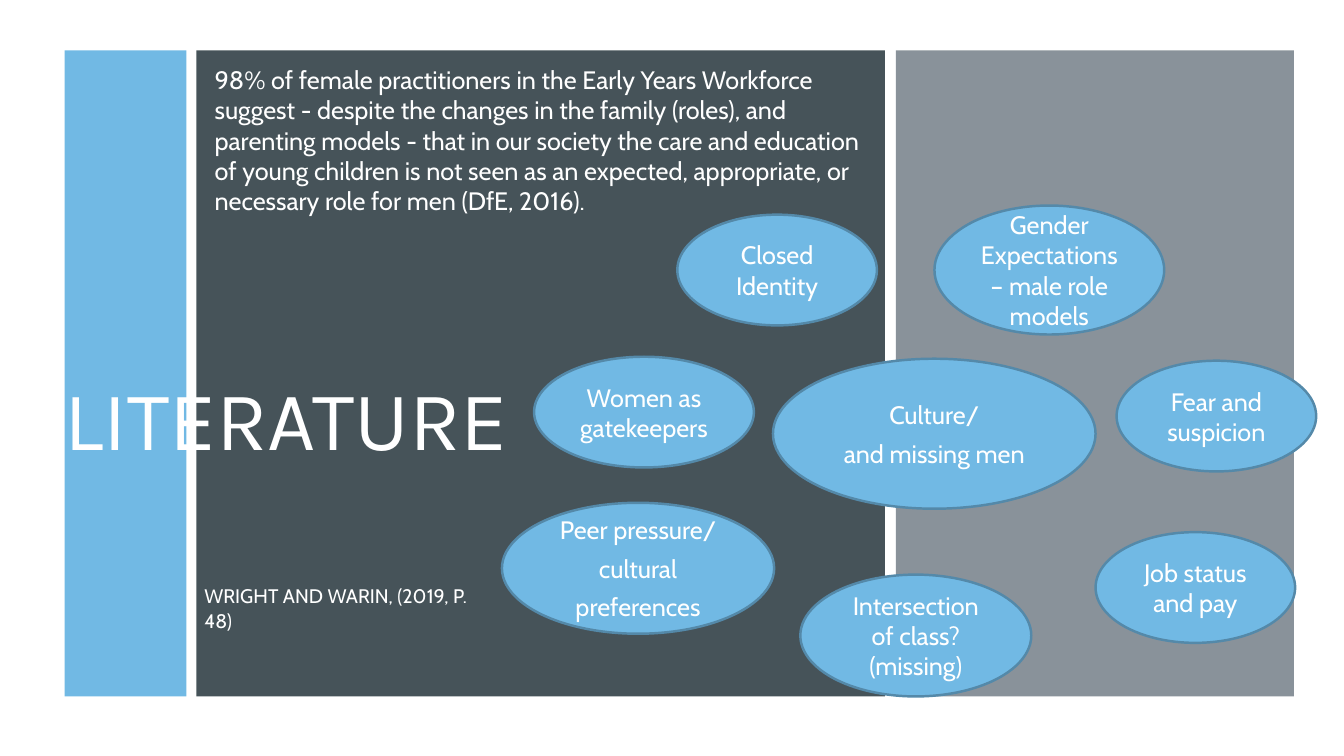
from lxml import etree
from pptx import Presentation
from pptx import util as u
from pptx.dml.color import RGBColor
from pptx.enum import shapes, text
from pptx.oxml.ns import qn

WHITE = RGBColor(0xFF, 0xFF, 0xFF)
BLUE = RGBColor(0x71, 0xB9, 0xE4)
BLUE_EDGE = RGBColor(0x54, 0x89, 0xA9)
SLATE = RGBColor(0x46, 0x53, 0x59)
GREY = RGBColor(0x6C, 0x77, 0x81)

WIDTH, HEIGHT = 33.87, 19.05
PANEL_TOP, PANEL_HEIGHT = 1.27, 16.28

QUOTE = (
    "98% of female practitioners in the Early Years Workforce suggest - "
    "despite the changes in the family (roles), and parenting models - "
    "that in our society the care and education of young children is not "
    "seen as an expected, appropriate, or necessary role for men (DfE, 2016)."
)

# left, top, width, height in cm, wording
THEMES = [
    (19.48, 9.04, 8.13, 3.78, "Culture/\nand missing men"),
    (23.55, 5.18, 5.79, 3.25, "Gender Expectations – male role models"),
    (13.46, 8.99, 5.54, 2.79, "Women as gatekeepers"),
    (20.17, 14.48, 5.82, 3.07, "Intersection of class? (missing)"),
    (28.14, 9.09, 5.03, 2.79, "Fear and suspicion"),
    (27.61, 13.41, 5.03, 2.79, "Job status and pay"),
    (12.65, 12.67, 6.86, 3.3, "Peer pressure/\ncultural\npreferences"),
    (17.07, 5.41, 5.03, 2.79, "Closed Identity"),
]


class Deck:
    """Holds the text style and the slide being built; lengths are in cm."""

    font, size = "Cabin", 18

    def __init__(self):
        self.prs = Presentation()
        self.prs.slide_width = u.Cm(WIDTH)
        self.prs.slide_height = u.Cm(HEIGHT)
        self.s = self.prs.slides.add_slide(self.prs.slide_layouts[5])

    def set_text(self, sp, wording, font=None, size=None,
                 align=text.PP_ALIGN.LEFT, anchor=text.MSO_ANCHOR.MIDDLE,
                 after=0, spacing=1.0):
        tf = sp.text_frame
        tf.text = wording
        tf.word_wrap = True
        tf.auto_size = text.MSO_AUTO_SIZE.NONE
        tf.vertical_anchor = anchor
        for p in tf.paragraphs:
            p.alignment = align
            p.space_before, p.space_after = u.Pt(0), u.Pt(after)
            p.line_spacing = spacing
            for r in p.runs:
                r.font.name = font or self.font
                r.font.size = u.Pt(size or self.size)
                r.font.color.rgb = WHITE

    def shape(self, kind, box, fill):
        sp = self.s.shapes.add_shape(kind, *map(u.Cm, box))
        sp.shadow.inherit = False
        sp.fill.solid()
        sp.fill.fore_color.rgb = fill
        sp.line.fill.background()
        return sp

    def panel(self, box, fill, opacity=100):
        sp = self.shape(shapes.MSO_SHAPE.RECTANGLE, box, fill)
        if opacity < 100:
            color = sp._element.spPr.find(".//" + qn("a:srgbClr"))
            etree.SubElement(color, qn("a:alpha"), val=str(opacity * 1000))

    def bubble(self, box, wording):
        sp = self.shape(shapes.MSO_SHAPE.OVAL, box, BLUE)
        sp.line.color.rgb = BLUE_EDGE
        sp.line.width = u.Pt(1.75)
        self.set_text(sp, wording, align=text.PP_ALIGN.CENTER, after=6)

    def title(self, box, wording):
        """Place the title placeholder in front of the panels drawn so far."""
        sp = self.s.shapes.title
        sp.left, sp.top, sp.width, sp.height = map(u.Cm, box)
        self.set_text(sp, wording, font="Karla", size=60)
        self.s.shapes._spTree.append(sp._element)

    def label(self, box, wording, **style):
        sp = self.s.shapes.add_textbox(*map(u.Cm, box))
        self.set_text(sp, wording, **style)


def main():
    deck = Deck()
    deck.panel((0, 0, WIDTH, HEIGHT), WHITE)
    for left, width, fill, opacity in [(1.63, 3.07, BLUE, 100),
                                       (4.95, 17.35, SLATE, 100),
                                       (22.58, 10.03, GREY, 80)]:
        deck.panel((left, PANEL_TOP, width, PANEL_HEIGHT), fill, opacity)
    deck.title((1.37, 3.94, 14.66, 13.11), "LITERATURE")
    deck.label((4.9, 12.83, 7.92, 4.93), "WRIGHT AND WARIN, (2019, P. 48)",
               size=14, after=6, spacing=1.1)
    for *box, wording in THEMES:
        deck.bubble(box, wording)
    deck.label((5.16, 1.5, 16.94, 4.11), QUOTE, anchor=text.MSO_ANCHOR.TOP)
    deck.prs.save("out.pptx")


if __name__ == "__main__":
    main()
